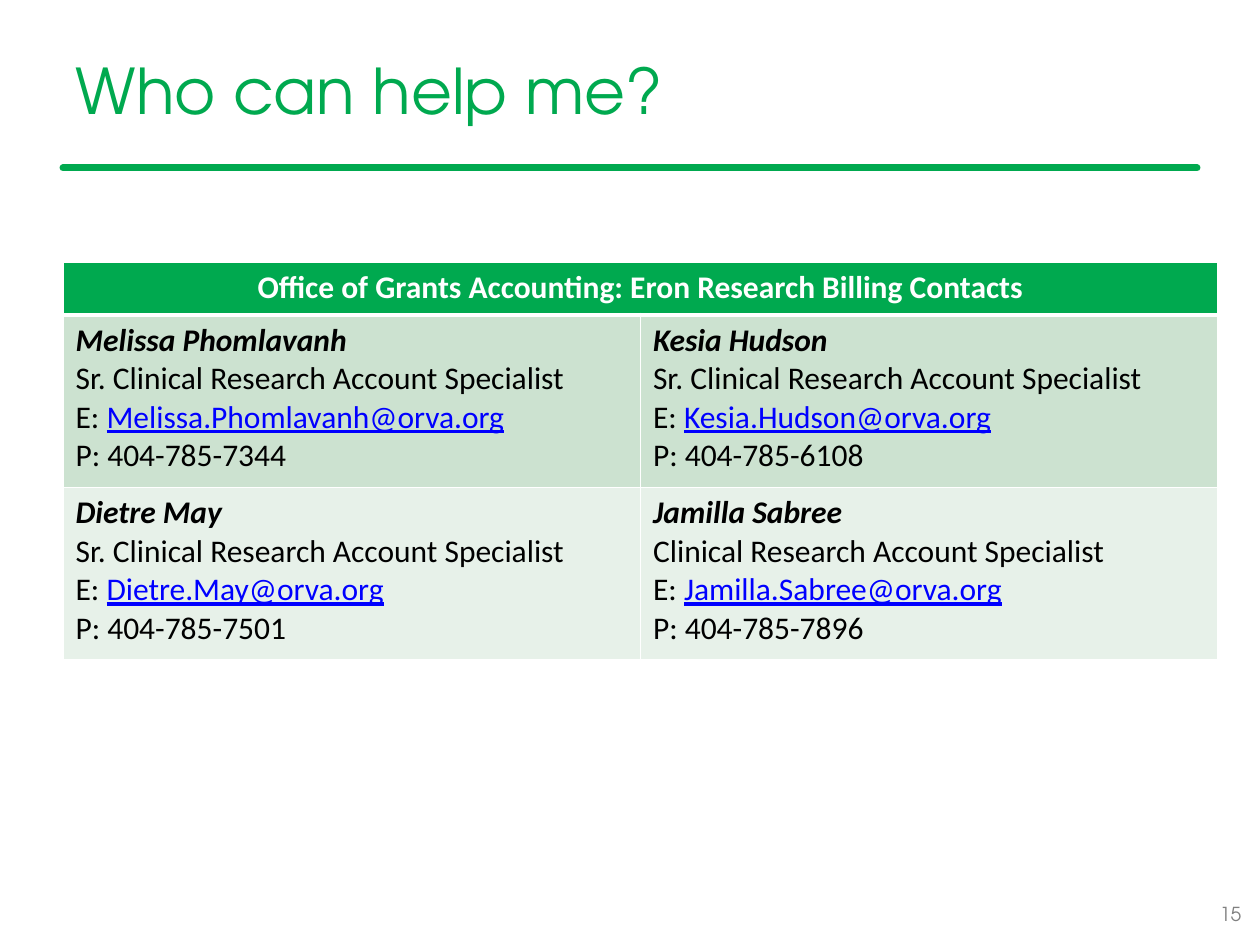
from lxml.etree import SubElement
from pptx import Presentation
from pptx.dml.color import RGBColor
from pptx.enum.shapes import MSO_CONNECTOR
from pptx.enum.text import MSO_ANCHOR, PP_ALIGN
from pptx.oxml.ns import qn
from pptx.util import Pt

GREEN = "00A94F"
WHITE = "FFFFFF"
LEFT = 36
HEADING_FONT = "TeX Gyre Adventor"
BODY_FONT = "Calibri"
SENIOR = "Sr. Clinical Research Account Specialist"
CONTACT_ROWS = [
    ("CCE2D0", [
        ("Melissa Phomlavanh", SENIOR, "Melissa.Phomlavanh@orva.org", "404-785-7344"),
        ("Kesia Hudson", SENIOR, "Kesia.Hudson@orva.org", "404-785-6108"),
    ]),
    ("E7F1E9", [
        ("Dietre May", SENIOR, "Dietre.May@orva.org", "404-785-7501"),
        ("Jamilla Sabree", "Clinical Research Account Specialist",
         "Jamilla.Sabree@orva.org", "404-785-7896"),
    ]),
]


def rgb(value):
    return RGBColor.from_string(value)


def add_text(paragraph, text, font=BODY_FONT, size=18, color="000000",
             bold=False, italic=False, underline=False, align=PP_ALIGN.LEFT):
    paragraph.alignment = align
    run = paragraph.add_run()
    run.text = text
    run.font.name = font
    run.font.size = Pt(size)
    run.font.color.rgb = rgb(color)
    run.font.bold = bold
    run.font.italic = italic
    run.font.underline = underline


def set_title(slide, text):
    title = slide.shapes.title
    title.left, title.top, title.width, title.height = Pt(LEFT), Pt(12), Pt(648), Pt(78)
    title.text_frame.vertical_anchor = MSO_ANCHOR.MIDDLE
    add_text(title.text_frame.paragraphs[0], text, font=HEADING_FONT, size=36, color=GREEN)


def add_rule(slide):
    rule = slide.shapes.add_connector(
        MSO_CONNECTOR.STRAIGHT, Pt(LEFT), Pt(96), Pt(684), Pt(96))
    rule.line.color.rgb = rgb(GREEN)
    rule.line.width = Pt(4)
    rule.line._get_or_add_ln().set("cap", "rnd")
    SubElement(rule._element.spPr, qn("a:effectLst"))


def format_cell(cell, fill, bottom=1):
    properties = cell._tc.get_or_add_tcPr()
    for side, width in (("L", 1), ("R", 1), ("T", 1), ("B", bottom)):
        border = SubElement(properties, qn(f"a:ln{side}"), w=str(Pt(width)))
        border_fill = SubElement(border, qn("a:solidFill"))
        SubElement(border_fill, qn("a:srgbClr"), val=WHITE)
    cell.fill.solid()
    cell.fill.fore_color.rgb = rgb(fill)


def fill_contact(cell, name, role, email, phone):
    frame = cell.text_frame
    add_text(frame.paragraphs[0], name, bold=True, italic=True)
    add_text(frame.add_paragraph(), role)
    email_line = frame.add_paragraph()
    add_text(email_line, "E: ")
    add_text(email_line, email, color="0000FF", underline=True)
    add_text(frame.add_paragraph(), f"P: {phone}")


def add_contacts(slide, heading):
    contacts = slide.shapes.add_table(
        3, 2, Pt(LEFT), Pt(150), Pt(660), Pt(228)).table
    for row, height in zip(contacts.rows, (30, 98.6, 98.6)):
        row.height = Pt(height)
    for column in range(2):
        format_cell(contacts.cell(0, column), GREEN, bottom=3)
    header = contacts.cell(0, 0)
    header.merge(contacts.cell(0, 1))
    add_text(header.text_frame.paragraphs[0], heading, color=WHITE,
             bold=True, align=PP_ALIGN.CENTER)
    for row, (fill, people) in enumerate(CONTACT_ROWS, 1):
        for column, person in enumerate(people):
            cell = contacts.cell(row, column)
            format_cell(cell, fill)
            fill_contact(cell, *person)


def add_page_number(slide, number):
    page_number = slide.shapes.add_textbox(Pt(690), Pt(512), Pt(30), Pt(28))
    page_number.text_frame.word_wrap = True
    add_text(page_number.text_frame.paragraphs[0], number,
             font=HEADING_FONT, size=11, color="808080")


def main():
    deck = Presentation()
    deck.slide_width, deck.slide_height = Pt(720), Pt(540)
    slide = deck.slides.add_slide(deck.slide_layouts[5])
    add_rule(slide)
    set_title(slide, "Who can help me?")
    add_contacts(slide, "Office of Grants Accounting: Eron Research Billing Contacts")
    add_page_number(slide, "15")
    deck.save("out.pptx")


if __name__ == "__main__":
    main()
